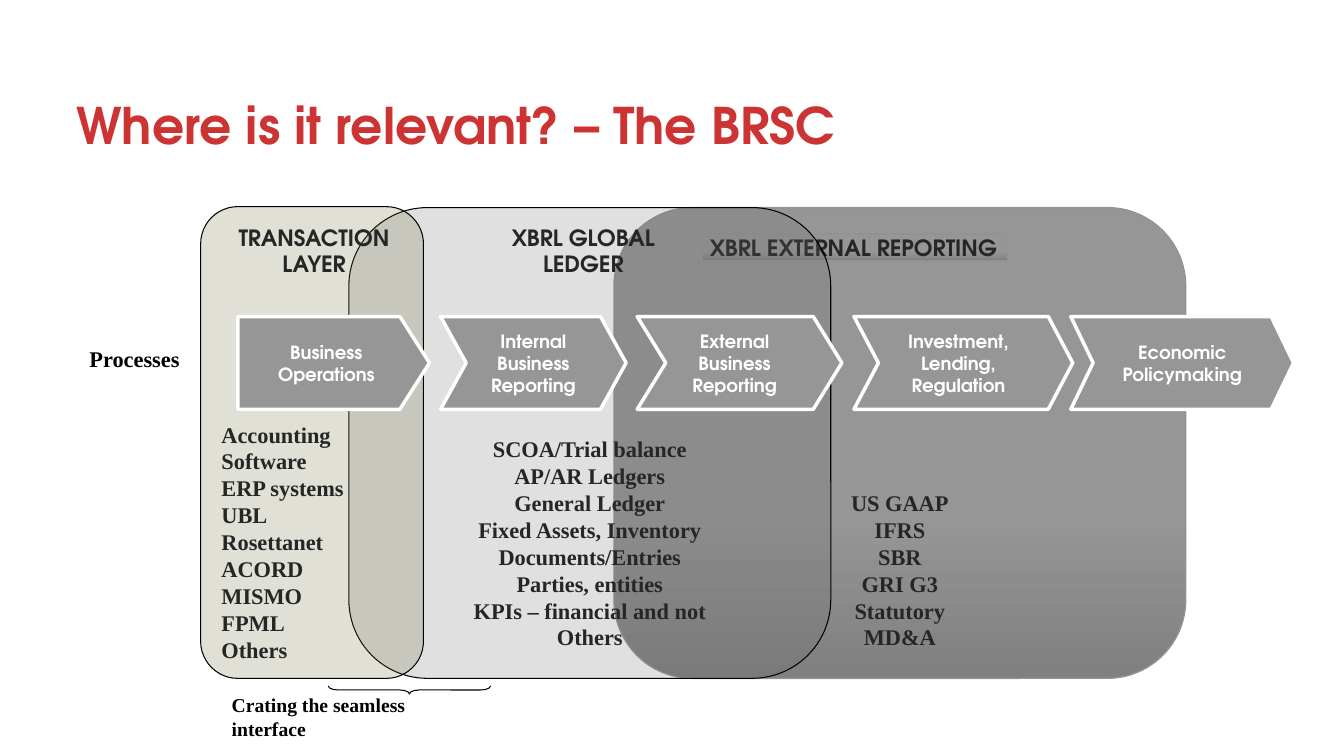
from dataclasses import dataclass

from lxml.etree import SubElement
from pptx import Presentation
from pptx.dml.color import RGBColor
from pptx.enum.shapes import MSO_SHAPE as Kind
from pptx.enum.text import MSO_ANCHOR as Anchor, PP_ALIGN as Align
from pptx.oxml.ns import qn
from pptx.util import Inches, Pt

HUES = {
    "red": "CC3333", "ink": "262626", "black": "000000", "white": "FFFFFF",
    "gray": "969696", "dark": "808080", "edge": "939393",
    "slate": "666666", "olive": "666633",
}
SANS, SERIF = "TeX Gyre Adventor", "Times New Roman"
TITLE = {"name": SANS, "size": Pt(36), "bold": True}
HEAD = {"name": SANS, "size": Pt(16), "bold": True}
LIST = {"name": SERIF, "size": Pt(16), "bold": True}
NOTE = {"name": SERIF, "size": Pt(14), "bold": True}
STEP = {"name": SANS, "size": Pt(13), "bold": True}
FLAT = (0.07, 0, 0.07, 0)
BASE = (0.1, 0.05, 0.1, 0.05)


@dataclass
class Panel:
    box: tuple
    hue: str
    lines: list
    align: Align
    head: list
    place: tuple


@dataclass
class Step:
    left: float
    width: float
    notch: float
    lines: list
    inset: tuple
    kind: Kind = Kind.CHEVRON


@dataclass
class Label:
    box: tuple
    text: str
    font: dict
    align: Align
    anchor: Anchor
    wrap: bool


PANELS = [
    Panel((6.09, 2.06, 5.67, 4.67), "gray",
          ["US GAAP", "IFRS", "SBR", "GRI G3", "Statutory", "MD&A"],
          Align.CENTER, ["XBRL EXTERNAL REPORTING"], (6.97, 2.32, 3.02, 0.27)),
    Panel((3.46, 2.06, 4.78, 4.67), "slate",
          ["SCOA/Trial balance", "AP/AR Ledgers", "General Ledger",
           "Fixed Assets, Inventory", "Documents/Entries", "Parties, entities",
           "KPIs – financial and not", "Others"],
          Align.CENTER, ["XBRL GLOBAL", "LEDGER"], (4.99, 2.22, 1.59, 0.54)),
    Panel((1.99, 2.05, 2.21, 4.68), "olive",
          ["Accounting", "Software", "ERP systems", "UBL", "Rosettanet",
           "ACORD", "MISMO", "FPML", "Others"],
          Align.LEFT, ["TRANSACTION", "LAYER"], (2.28, 2.22, 1.67, 0.54)),
]
STEPS = [
    Step(2.36, 1.9, 0.319, ["Business", "Operations"], BASE, Kind.PENTAGON),
    Step(4.37, 1.84, 0.276, ["Internal", "Business", "Reporting"],
         (0, 0.05, 0, 0.05)),
    Step(6.32, 2.03, 0.308, ["External", "Business", "Reporting"],
         (0, 0.05, 0.1, 0.05)),
    Step(8.47, 2.17, 0.264, ["Investment,", "Lending,", "Regulation"],
         (0, 0.05, 0.1, 0.05)),
    Step(10.62, 2.21, 0.241, ["Economic Policymaking"], (0, 0.05, 0, 0.05)),
]
LABELS = [
    Label((0.78, 3.37, 1.1, 0.37), "Processes", LIST, Align.RIGHT,
          Anchor.MIDDLE, False),
    Label((2.2, 6.83, 2.4, 0.54), "Crating the seamless interface", NOTE,
          Align.LEFT, Anchor.TOP, True),
]


def rgb(hue: str) -> RGBColor:
    return RGBColor.from_string(HUES[hue])


def write(frame, lines: list, font: dict, hue: str, align: Align,
          anchor: Anchor, inset: tuple = BASE, wrap: bool = True) -> None:
    """Put one paragraph per line into a text frame and format it."""
    frame.word_wrap = wrap
    frame.vertical_anchor = anchor
    sides = ("margin_left", "margin_top", "margin_right", "margin_bottom")
    for side, size in zip(sides, inset):
        setattr(frame, side, Inches(size))
    frame.text = "\n".join(lines)
    for para in frame.paragraphs:
        para.alignment = align
        for key, value in font.items():
            setattr(para.font, key, value)
        para.font.color.rgb = rgb(hue)


def draw(slide, kind: Kind, box: tuple, line: str, width: float):
    shape = slide.shapes.add_shape(kind, *map(Inches, box))
    shape.shadow.inherit = False
    shape.line.color.rgb = rgb(line)
    shape.line.width = Pt(width)
    return shape


def shade(shape) -> None:
    """Fill with gray that darkens toward the lower edge."""
    shape.fill.gradient()
    shape.fill.gradient_angle = 90
    for stop, (hue, place) in zip(shape.fill.gradient_stops,
                                  (("dark", 0), ("gray", 0.35))):
        stop.color.rgb = rgb(hue)
        stop.position = place


def tint(shape, hue: str, alpha: int = 100) -> None:
    """Fill with one colour at the given percentage of opacity."""
    shape.fill.solid()
    shape.fill.fore_color.rgb = rgb(hue)
    if alpha < 100:
        node = shape._element.spPr.find(qn("a:solidFill")).find(qn("a:srgbClr"))
        SubElement(node, qn("a:alpha")).set("val", str(alpha * 1000))


def add_panel(slide, panel: Panel) -> None:
    solid = panel.hue == "gray"
    edge = ("edge", 1) if solid else ("black", 0.75)
    shape = draw(slide, Kind.ROUNDED_RECTANGLE, panel.box, *edge)
    if solid:
        shade(shape)
        head = draw(slide, Kind.RECTANGLE, panel.place, *edge)
        shade(head)
    else:
        tint(shape, panel.hue, 20)
        head = slide.shapes.add_textbox(*map(Inches, panel.place))
    write(shape.text_frame, panel.lines, LIST, "ink", panel.align, Anchor.BOTTOM)
    write(head.text_frame, panel.head, HEAD, "ink",
          Align.LEFT if solid else Align.CENTER, Anchor.TOP, FLAT, False)


def add_step(slide, step: Step) -> None:
    shape = draw(slide, step.kind, (step.left, 3.14, step.width, 0.92),
                 "white", 2.5)
    shape.adjustments[0] = step.notch
    tint(shape, "gray")
    write(shape.text_frame, step.lines, STEP, "white", Align.CENTER,
          Anchor.MIDDLE, step.inset)


def add_label(slide, label: Label) -> None:
    box = slide.shapes.add_textbox(*map(Inches, label.box))
    write(box.text_frame, [label.text], label.font, "black", label.align,
          label.anchor, wrap=label.wrap)


def add_brace(slide) -> None:
    brace = draw(slide, Kind.RIGHT_BRACE, (4.02, 6.04, 0.08, 1.61),
                 "black", 0.75)
    brace.fill.background()
    brace.rotation = 90
    brace.adjustments[0] = 1.21


def main() -> None:
    deck = Presentation()
    deck.slide_width, deck.slide_height = Inches(13.33), Inches(7.5)
    slide = deck.slides.add_slide(deck.slide_layouts[5])
    title = slide.shapes.title
    title.left, title.top, title.width, title.height = map(
        Inches, (0.66, 0.33, 9.49, 1.25))
    write(title.text_frame, ["Where is it relevant? – The BRSC"], TITLE, "red",
          Align.LEFT, Anchor.BOTTOM)
    for panel in PANELS:
        add_panel(slide, panel)
    add_brace(slide)
    for label in LABELS:
        add_label(slide, label)
    for step in STEPS:
        add_step(slide, step)
    deck.save("out.pptx")


if __name__ == "__main__":
    main()
